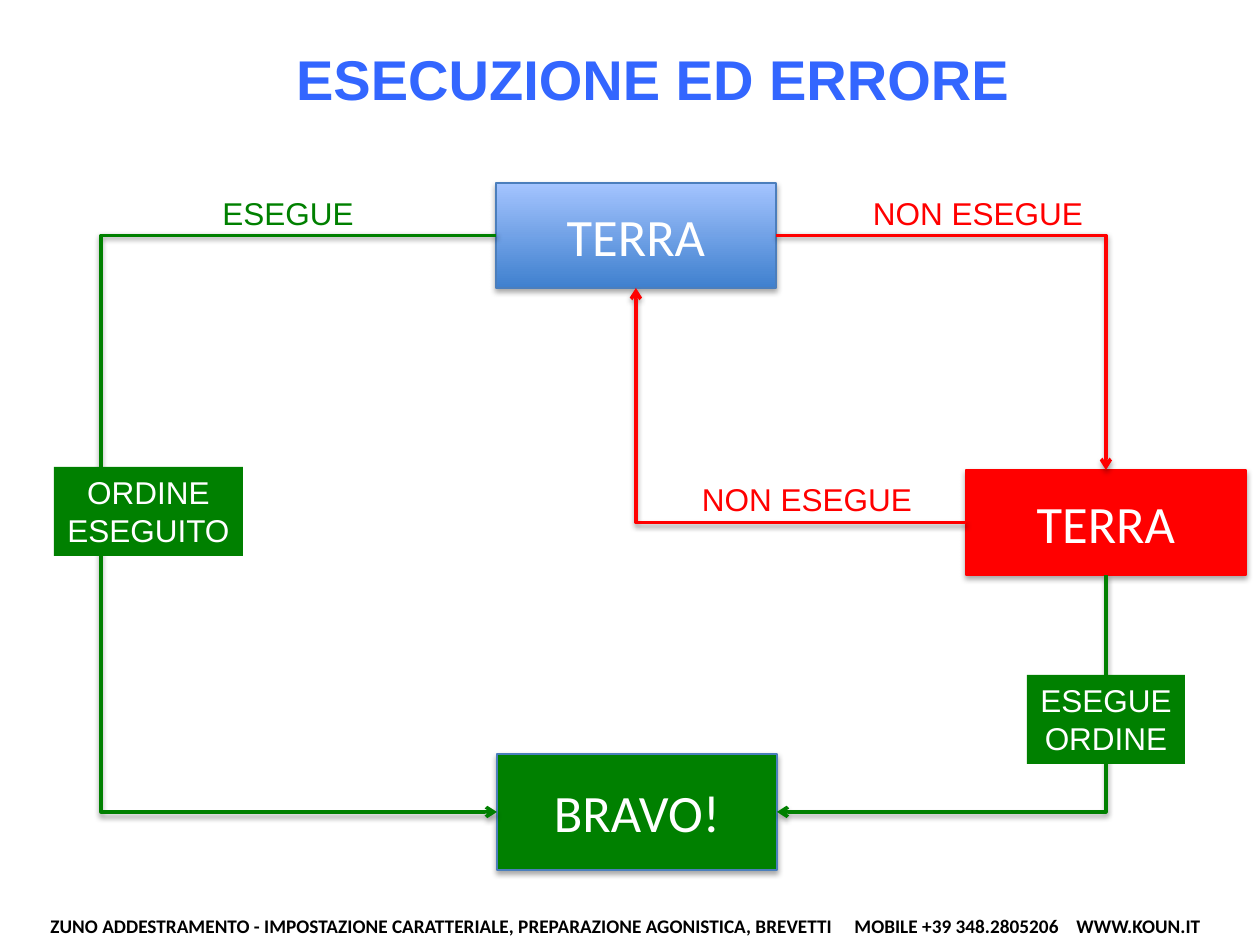
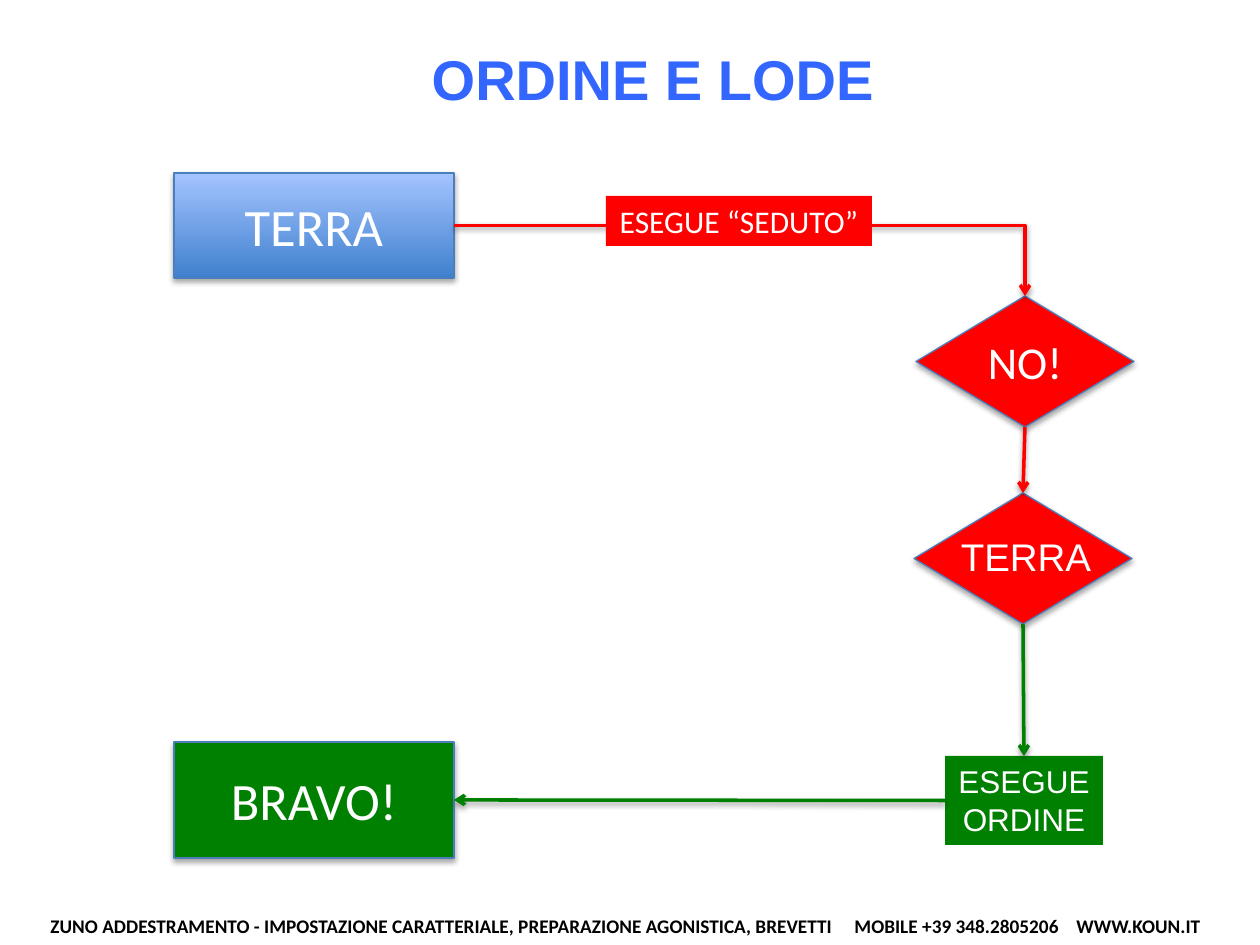
from pptx import Presentation
from pptx.dml.color import RGBColor
from pptx.enum.shapes import MSO_CONNECTOR as LINK, MSO_SHAPE as SHAPE
from pptx.enum.text import MSO_ANCHOR as ANCHOR, MSO_AUTO_SIZE as FIT, PP_ALIGN as ALIGN
from pptx.oxml import parse_xml
from pptx.oxml.ns import nsdecls, qn
from pptx.util import Emu, Pt
from lxml.etree import SubElement

PX = 914400 / 126
BLUE, GREEN, RED, WHITE, BLACK = "3366FF", "008000", "FF0000", "FFFFFF", "000000"
EDGE, SKY, DEEP = "4B7EBC", "A4C4FF", "3F80CE"
TOP, LEFT, BOTTOM, RIGHT = range(4)
FOOTER = ("ZUNO ADDESTRAMENTO - IMPOSTAZIONE CARATTERIALE, PREPARAZIONE AGONISTICA, BREVETTI"
          "\tMOBILE +39 348.2805206\tWWW.KOUN.IT")
FOOTER_TABS = (804, 1026)

# Look of each kind of box: fill, outline, shadow and text
big = {"font": "Calibri", "size": 30, "color": WHITE}
small = {"font": "Arial", "size": 18, "color": WHITE, "fit": True}
STYLES = {
    "order": {**big, "fill": (DEEP, SKY), "line": EDGE, "shadow": True},
    "repeat": {**big, "fill": RED, "line": RED, "shadow": True},
    "praise": {**big, "fill": GREEN, "line": EDGE, "shadow": True},
    "stop": {**big, "size": 26, "fill": RED, "line": EDGE, "shadow": True, "shape": SHAPE.DIAMOND},
    "done": {**small, "fill": GREEN, "shape": SHAPE.RECTANGLE},
    "wrong": {**small, "font": "Calibri", "fill": RED, "shape": SHAPE.RECTANGLE},
    "red label": {**small, "color": RED},
    "green label": {**small, "color": GREEN},
    "white label": {**small, "size": 22},
    "title": {"font": "Arial", "size": 32, "color": BLUE, "bold": True},
    "footer": {"font": "Calibri", "size": 11, "color": BLACK, "bold": True,
               "align": ALIGN.LEFT, "anchor": ANCHOR.TOP},
}

# Nodes: name: (style, text, left, top, width, height)
# Arrows: (color, from, side, to, side, kind, end that has the head)
# Labels: (style, text, left, top, width, height), above the arrows
PAGES = [
    {"title": "ESECUZIONE ED ERRORE",
     "nodes": {
         "order": ("order", "TERRA", 496, 183, 280, 105),
         "repeat": ("repeat", "TERRA", 966, 470, 280, 105),
         "praise": ("praise", "BRAVO!", 497, 754, 280, 116)},
     "arrows": [
         (GREEN, "praise", RIGHT, "repeat", BOTTOM, "bentConnector2", "headEnd"),
         (RED, "order", RIGHT, "repeat", TOP, "bentConnector2", "tailEnd"),
         (RED, "repeat", LEFT, "order", BOTTOM, "bentConnector2", "tailEnd"),
         (GREEN, "order", LEFT, "praise", LEFT, "bentConnector3", "tailEnd")],
     "labels": [
         ("red label", "NON ESEGUE", 859, 188, 238, 50),
         ("red label", "NON ESEGUE", 688, 474, 238, 50),
         ("green label", "ESEGUE", 209, 188, 158, 50),
         ("done", "ORDINE\nESEGUITO", 54, 467, 189, 89),
         ("done", "ESEGUE\nORDINE", 1027, 675, 158, 89)]},
    {"title": "ORDINE E LODE",
     "nodes": {
         "order": ("order", "TERRA", 174, 173, 280, 105),
         "done": ("done", "ESEGUE\nORDINE", 945, 756, 158, 89),
         "no": ("stop", "NO!", 916, 296, 218, 131),
         "again": ("stop", "", 914, 493, 218, 131),
         "praise": ("praise", "BRAVO!", 174, 742, 280, 116)},
     "arrows": [
         (RED, "order", RIGHT, "no", TOP, "bentConnector2", "tailEnd"),
         (RED, "no", BOTTOM, "again", TOP, "line", "tailEnd"),
         (GREEN, "again", BOTTOM, "done", TOP, "line", "tailEnd"),
         (GREEN, "done", LEFT, "praise", RIGHT, "line", "tailEnd")],
     "labels": [
         ("wrong", "ESEGUE “SEDUTO”", 606, 196, 266, 50),
         ("white label", "TERRA", 946, 527, 160, 59)]},
]
LOOP_REACH = 398  # how far the left loop swings out from the boxes


def rgb(value):
    return RGBColor.from_string(value)


def add_box(page, style_name, text, *place):
    style = STYLES[style_name]
    place = [Emu(round(value * PX)) for value in place]
    if "fill" in style:
        box = page.shapes.add_shape(style.get("shape", SHAPE.FLOWCHART_PROCESS), *place)
        box.shadow.inherit = False
        if isinstance(style["fill"], tuple):
            box.fill.gradient()
            box.fill.gradient_angle = 90
            for stop, position, color in zip(box.fill.gradient_stops, (0, 1), style["fill"]):
                stop.position, stop.color.rgb = position, rgb(color)
        else:
            box.fill.solid()
            box.fill.fore_color.rgb = rgb(style["fill"])
        if "line" in style:
            box.line.color.rgb = rgb(style["line"])
            box.line.width = Pt(0.75)
        else:
            box.line.fill.background()
    else:
        box = page.shapes.add_textbox(*place)
    if style.get("shadow"):
        effects = box._element.spPr.find(qn("a:effectLst"))
        effects.append(parse_xml(SHADOW.format(space=nsdecls("a"), distance=23000, alpha=35000)))
    frame = box.text_frame
    fit = style.get("fit", False)
    frame_format = {"word_wrap": not fit, "auto_size": FIT.SHAPE_TO_FIT_TEXT if fit else FIT.NONE,
                    "vertical_anchor": style.get("anchor", ANCHOR.TOP if fit else ANCHOR.MIDDLE)}
    for name, value in frame_format.items():
        setattr(frame, name, value)
    frame.text = text
    for para in frame.paragraphs:
        para.alignment = style.get("align", ALIGN.CENTER)
        for span in para.runs:
            font_format = {"name": style["font"], "size": Pt(style["size"]),
                           "bold": style.get("bold", False)}
            for name, value in font_format.items():
                setattr(span.font, name, value)
            span.font.color.rgb = rgb(style["color"])
    return box


SHADOW = ('<a:outerShdw {space} blurRad="40000" dist="{distance}" dir="5400000" rotWithShape="0">'
          '<a:srgbClr val="000000"><a:alpha val="{alpha}"/></a:srgbClr></a:outerShdw>')

deck = Presentation()
deck.slide_width, deck.slide_height = Emu(round(1260 * PX)), Emu(round(945 * PX))

for content in PAGES:
    page = deck.slides.add_slide(deck.slide_layouts[6])
    add_box(page, "title", content["title"], 198, 32, 910, 92)

    # Steps of the flow
    nodes = {name: add_box(page, *node) for name, node in content["nodes"].items()}

    # Arrows, glued to the sides of the steps
    for color, start, start_side, finish, finish_side, kind, head in content["arrows"]:
        arrow = page.shapes.add_connector(LINK.STRAIGHT if kind == "line" else LINK.ELBOW, 0, 0, 0, 0)
        arrow.begin_connect(nodes[start], start_side)
        arrow.end_connect(nodes[finish], finish_side)
        arrow.line.color.rgb = rgb(color)
        arrow.line.width = Pt(2)
        properties = arrow._element.spPr
        SubElement(properties.find(qn("a:ln")), qn(f"a:{head}"), type="arrow")
        geometry = properties.find(qn("a:prstGeom"))
        geometry.set("prst", kind)
        if kind == "bentConnector3":
            reach = round(-LOOP_REACH * PX / arrow.width * 100000)
            guides = geometry.get_or_add_avLst()
            SubElement(guides, qn("a:gd"), name="adj1", fmla=f"val {reach}")
        effects = SubElement(properties, qn("a:effectLst"))
        effects.append(parse_xml(SHADOW.format(space=nsdecls("a"), distance=20000, alpha=38000)))

    # Labels on the arrows
    for label in content["labels"]:
        add_box(page, *label)

    # Footer with tab stops between its three parts
    footer = add_box(page, "footer", FOOTER, 38, 908, 1216, 37)
    tabs = SubElement(footer.text_frame.paragraphs[0]._p.get_or_add_pPr(), qn("a:tabLst"))
    for position in FOOTER_TABS:
        SubElement(tabs, qn("a:tab"), pos=str(round(position * PX)), algn="l")

deck.save("out.pptx")
